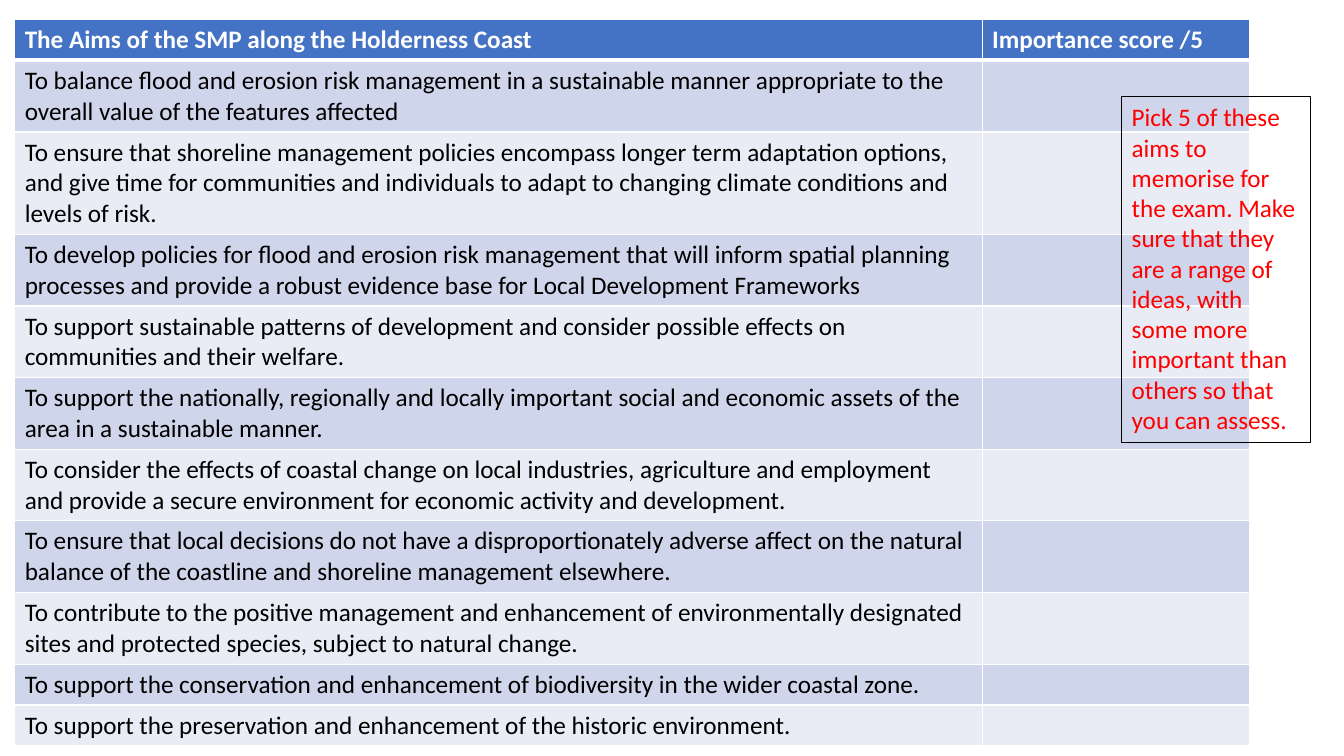
from lxml.etree import SubElement
from pptx import Presentation
from pptx.dml.color import RGBColor
from pptx.enum.shapes import MSO_SHAPE
from pptx.enum.text import MSO_ANCHOR, MSO_AUTO_SIZE, PP_ALIGN
from pptx.oxml.ns import qn
from pptx.util import Cm, Pt

HEAD = ["The Aims of the SMP along the Holderness Coast", "Importance score /5"]

# Each aim with the number of lines it takes
AIMS = [
    ("To balance flood and erosion risk management in a sustainable manner "
     "appropriate to the overall value of the features affected", 2),
    ("To ensure that shoreline management policies encompass longer term "
     "adaptation options, and give time for communities and individuals to "
     "adapt to changing climate conditions and levels of risk.", 3),
    ("To develop policies for flood and erosion risk management that will "
     "inform spatial planning processes and provide a robust evidence base "
     "for Local Development Frameworks", 2),
    ("To support sustainable patterns of development and consider possible "
     "effects on communities and their welfare.", 2),
    ("To support the nationally, regionally and locally important social and "
     "economic assets of the area in a sustainable manner.", 2),
    ("To consider the effects of coastal change on local industries, "
     "agriculture and employment and provide a secure environment for "
     "economic activity and development.", 2),
    ("To ensure that local decisions do not have a disproportionately adverse "
     "affect on the natural balance of the coastline and shoreline "
     "management elsewhere.", 2),
    ("To contribute to the positive management and enhancement of "
     "environmentally designated sites and protected species, subject to "
     "natural change.", 2),
    ("To support the conservation and enhancement of biodiversity in the "
     "wider coastal zone.", 1),
    ("To support the preservation and enhancement of the historic "
     "environment.", 1),
]

TASK = ("Pick 5 of these aims to memorise for the exam. Make sure that they "
        "are a range of ideas, with some more important than others so that "
        "you can assess.")


def color(code):
    return RGBColor.from_string(code)


def write(frame, text, font="Calibri", size=18, ink="000000", bold=False):
    para = frame.paragraphs[0]
    para.alignment = PP_ALIGN.LEFT
    para.font.size = Pt(size)
    if text:
        run = para.add_run()
        run.text = text
        run.font.name = font
        run.font.size = Pt(size)
        run.font.bold = bold
        run.font.color.rgb = color(ink)


def edge(cell, side, width, ink="FFFFFF"):
    line = SubElement(cell._tc.get_or_add_tcPr(), qn(f"a:ln{side}"),
                      w=str(Pt(width)))
    fill = SubElement(line, qn("a:solidFill"))
    SubElement(fill, qn("a:srgbClr"), val=ink)


class Deck:
    blue = "4472C4"
    bands = ["CFD5EA", "E9EBF5"]

    def __init__(self):
        self.prs = Presentation()
        self.prs.slide_width, self.prs.slide_height = Cm(33.87), Cm(19.05)
        self.slide = self.prs.slides.add_slide(self.prs.slide_layouts[6])

    def cell(self, cell, text, fill, top=1, base=1, **style):
        for side, width in zip("LRTB", (1, 1, top, base)):
            edge(cell, side, width)
        cell.fill.solid()
        cell.fill.fore_color.rgb = color(fill)
        write(cell.text_frame, text, **style)

    def table(self, left, top, widths, height, head, aims):
        frame = self.slide.shapes.add_table(
            len(aims) + 1, len(widths), Cm(left), Cm(top),
            Cm(sum(widths)), Cm(height))
        grid = frame.table
        for col, width in zip(grid.columns, widths):
            col.width = Cm(width)
        for row, lines in zip(grid.rows, [1] + [n for _, n in aims]):
            row.height = Cm(0.22 + 0.69 * lines)
        frame.height = Cm(height)
        for col, text in enumerate(head):
            self.cell(grid.cell(0, col), text, self.blue, base=3,
                      ink="FFFFFF", bold=True)
        for row, (aim, _) in enumerate(aims, 1):
            for col, text in enumerate((aim, "")):
                self.cell(grid.cell(row, col), text, self.bands[(row - 1) % 2],
                          top=3 if row == 1 else 1)

    def note(self, left, top, width, height, text, **style):
        box = self.slide.shapes.add_shape(
            MSO_SHAPE.RECTANGLE, Cm(left), Cm(top), Cm(width), Cm(height))
        box.shadow.inherit = False
        box.fill.background()
        box.line.color.rgb = color("000000")
        box.line.width = Pt(0.75)
        frame = box.text_frame
        frame.word_wrap = True
        frame.auto_size = MSO_AUTO_SIZE.SHAPE_TO_FIT_TEXT
        frame.vertical_anchor = MSO_ANCHOR.TOP
        write(frame, text, **style)


def main():
    deck = Deck()
    # Table of aims
    deck.table(0.37, 0.49, [24.38, 6.73], 18.03, HEAD, AIMS)
    # Task note
    deck.note(28.27, 2.44, 4.75, 8.71, TASK, ink="FF0000")
    deck.prs.save("out.pptx")


if __name__ == "__main__":
    main()
